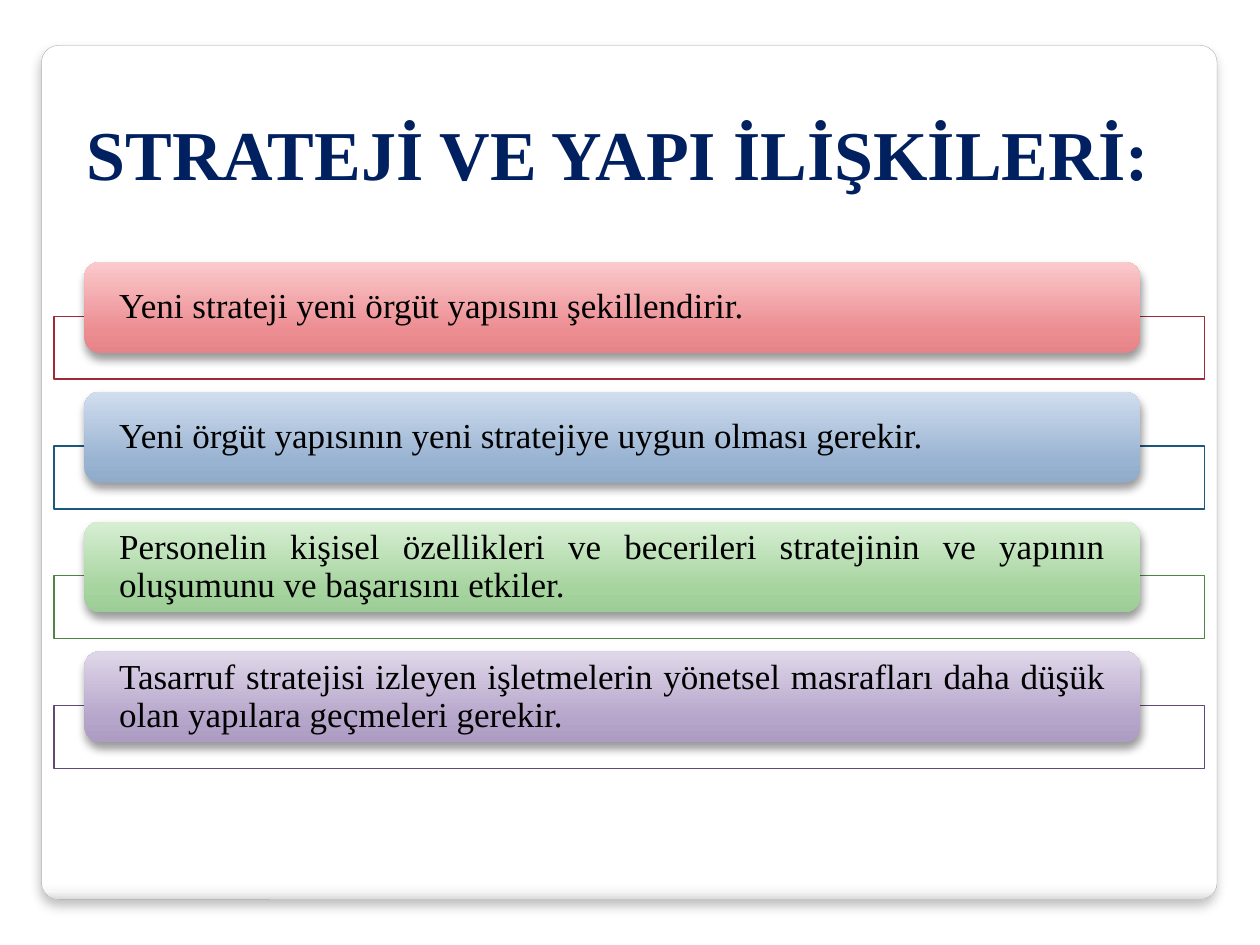
from dataclasses import dataclass

from lxml import etree
from pptx import Presentation
from pptx import util as u
from pptx.dml.color import RGBColor
from pptx.enum import shapes, text
from pptx.oxml.ns import qn


@dataclass(frozen=True)
class Theme:
    font: str = "Times New Roman"
    title_size: int = 40
    body_size: int = 20
    title_color: str = "002060"
    body_color: str = "000000"
    paper: str = "FFFFFF"
    panel_line: str = "A4A4A4"
    panel_stops: tuple = ((0, "FFFFFF"), (98, "FFFFFF"), (99, "F7F7F7"), (100, "DADADA"))
    # Outline, then the card gradient from bottom to top
    accents: tuple = (
        ("9F2936", "E68589", "EC8D92", "FBCACC"),
        ("1B587C", "90ABCB", "99B3D2", "D1DEEE"),
        ("4E8542", "9DCD96", "A5D49E", "D7EED3"),
        ("604878", "AD9CC3", "B5A5CA", "DFD7E9"),
    )


def add_color(parent, color, opacity=100):
    element = etree.SubElement(parent, qn("a:srgbClr"), val=color)
    if opacity < 100:
        etree.SubElement(element, qn("a:alpha"), val=str(opacity * 1000))


class SlideBuilder:
    def __init__(self, slide, theme):
        self.slide = slide
        self.theme = theme

    def background(self):
        fill = self.slide.background.fill
        fill.solid()
        fill.fore_color.rgb = RGBColor.from_string(self.theme.paper)

    def shape(self, kind, left, top, width, height):
        shape = self.slide.shapes.add_shape(
            kind, u.Inches(left), u.Inches(top), u.Inches(width), u.Inches(height))
        shape.shadow.inherit = False
        shape.line.fill.background()
        return shape

    def outline(self, shape, color, width):
        shape.line.color.rgb = RGBColor.from_string(color)
        shape.line.width = u.Pt(width)

    def gradient(self, shape, stops, angle):
        """Fill along a clockwise angle, with any number of stops."""
        shape.fill.gradient()
        gradient = shape.element.spPr.find(qn("a:gradFill"))
        stop_list = gradient.find(qn("a:gsLst"))
        for stop in list(stop_list):
            stop_list.remove(stop)
        for position, color in stops:
            add_color(etree.SubElement(stop_list, qn("a:gs"), pos=str(position * 1000)), color)
        gradient.find(qn("a:lin")).set("ang", str(angle * 60000))

    def drop_shadow(self, shape, opacity, blur, distance):
        effects = shape.element.spPr.find(qn("a:effectLst"))
        shadow = etree.SubElement(
            effects, qn("a:outerShdw"), blurRad=str(u.Pt(blur)), dist=str(u.Pt(distance)),
            dir="5400000", algn="t", rotWithShape="0")
        add_color(shadow, "000000", opacity)

    def add_words(self, frame, words, size, color, bold=False):
        frame.word_wrap = True
        frame.auto_size = text.MSO_AUTO_SIZE.NONE
        paragraph = frame.paragraphs[0]
        run = paragraph.add_run()
        run.text = words
        run.font.name = self.theme.font
        run.font.size = u.Pt(size)
        run.font.bold = bold
        run.font.color.rgb = RGBColor.from_string(color)
        return paragraph

    def panel(self):
        panel = self.shape(shapes.MSO_SHAPE.ROUNDED_RECTANGLE, 0.33, 0.36, 9.33, 6.78)
        panel.adjustments[0] = 0.02
        self.gradient(panel, self.theme.panel_stops, 90)
        self.outline(panel, self.theme.panel_line, 0.16)
        self.drop_shadow(panel, 25, 6, 4)

    def title(self, words):
        box = self.slide.shapes.add_textbox(
            u.Inches(0.59), u.Inches(0.76), u.Inches(8.74), u.Inches(0.71))
        frame = box.text_frame
        frame.margin_top = u.Inches(0.12)
        frame.margin_bottom = 0
        self.add_words(frame, words, self.theme.title_size, self.theme.title_color, bold=True)

    def frame(self, top, color):
        frame = self.shape(shapes.MSO_SHAPE.RECTANGLE, 0.43, top, 9.13, 0.5)
        frame.fill.solid()
        frame.fill.fore_color.rgb = RGBColor.from_string(self.theme.paper)
        opaque = frame.element.spPr.find(qn("a:solidFill")).find(qn("a:srgbClr"))
        etree.SubElement(opaque, qn("a:alpha"), val="90000")
        self.outline(frame, color, 0.75)

    def card(self, top, colors, words):
        card = self.shape(shapes.MSO_SHAPE.ROUNDED_RECTANGLE, 0.67, top, 8.38, 0.72)
        self.gradient(card, zip((0, 25, 100), colors), 270)
        self.drop_shadow(card, 40, 5.2, 3)
        frame = card.text_frame
        frame.vertical_anchor = text.MSO_ANCHOR.MIDDLE
        frame.margin_left = frame.margin_right = u.Inches(0.24)
        frame.margin_top = frame.margin_bottom = 0
        paragraph = self.add_words(frame, words, self.theme.body_size, self.theme.body_color)
        paragraph.alignment = text.PP_ALIGN.JUSTIFY
        paragraph.line_spacing = 0.9


STATEMENTS = (
    "Yeni strateji yeni örgüt yapısını şekillendirir.",
    "Yeni örgüt yapısının yeni stratejiye uygun olması gerekir.",
    "Personelin kişisel özellikleri ve becerileri stratejinin ve yapının "
    "oluşumunu ve başarısını etkiler.",
    "Tasarruf stratejisi izleyen işletmelerin yönetsel masrafları daha düşük "
    "olan yapılara geçmeleri gerekir.",
)
FIRST_CARD_TOP = 2.08
ROW_STEP = 1.03
FRAME_DROP = 0.43


def main():
    presentation = Presentation()
    presentation.slide_width = u.Inches(10)
    presentation.slide_height = u.Inches(7.5)
    theme = Theme()
    builder = SlideBuilder(presentation.slides.add_slide(presentation.slide_layouts[6]), theme)

    builder.background()
    builder.panel()
    builder.title("STRATEJİ VE YAPI İLİŞKİLERİ:")
    for row, (words, accent) in enumerate(zip(STATEMENTS, theme.accents)):
        line_color, *card_colors = accent
        top = FIRST_CARD_TOP + row * ROW_STEP
        builder.frame(top + FRAME_DROP, line_color)
        builder.card(top, card_colors, words)

    presentation.save("out.pptx")


if __name__ == "__main__":
    main()
